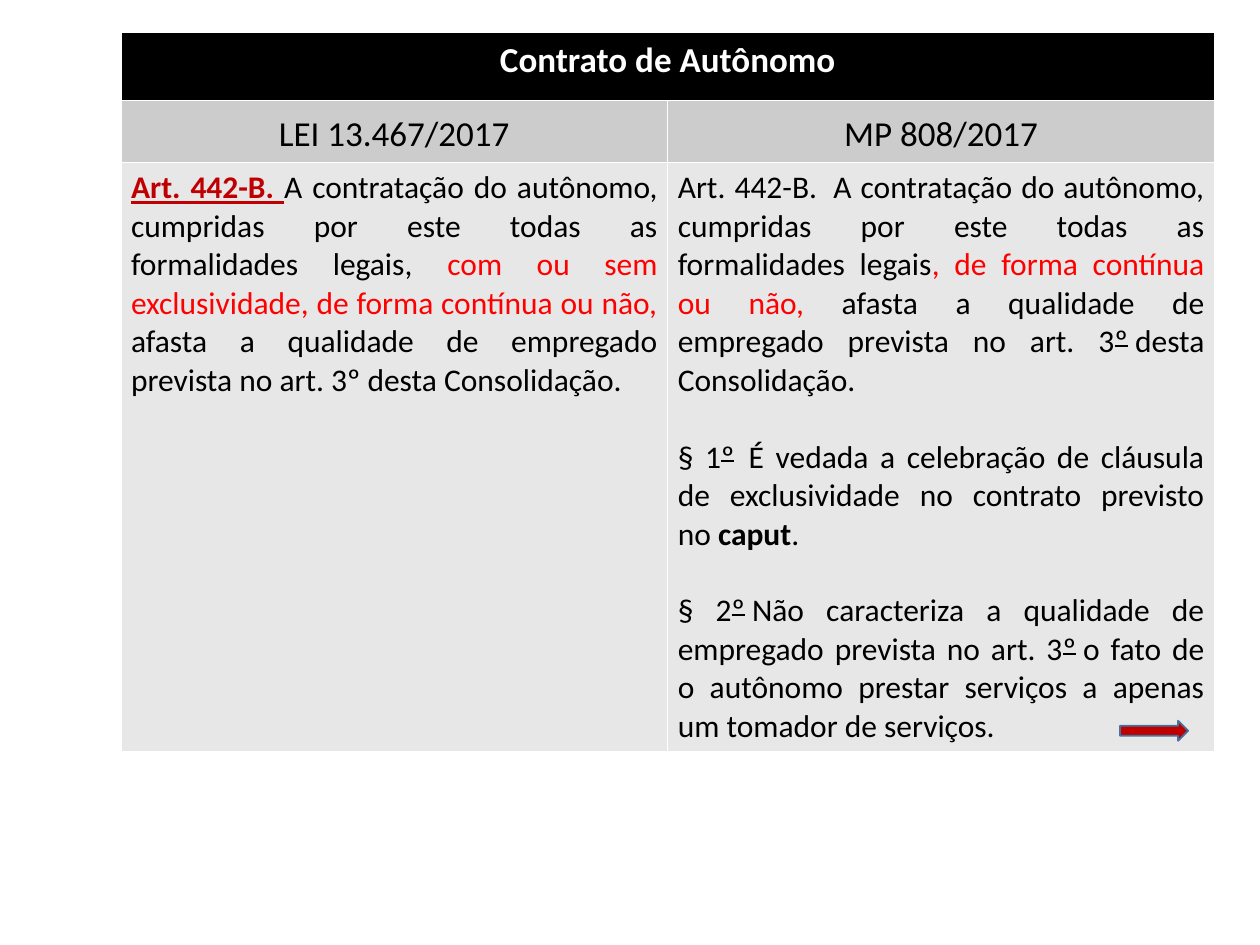
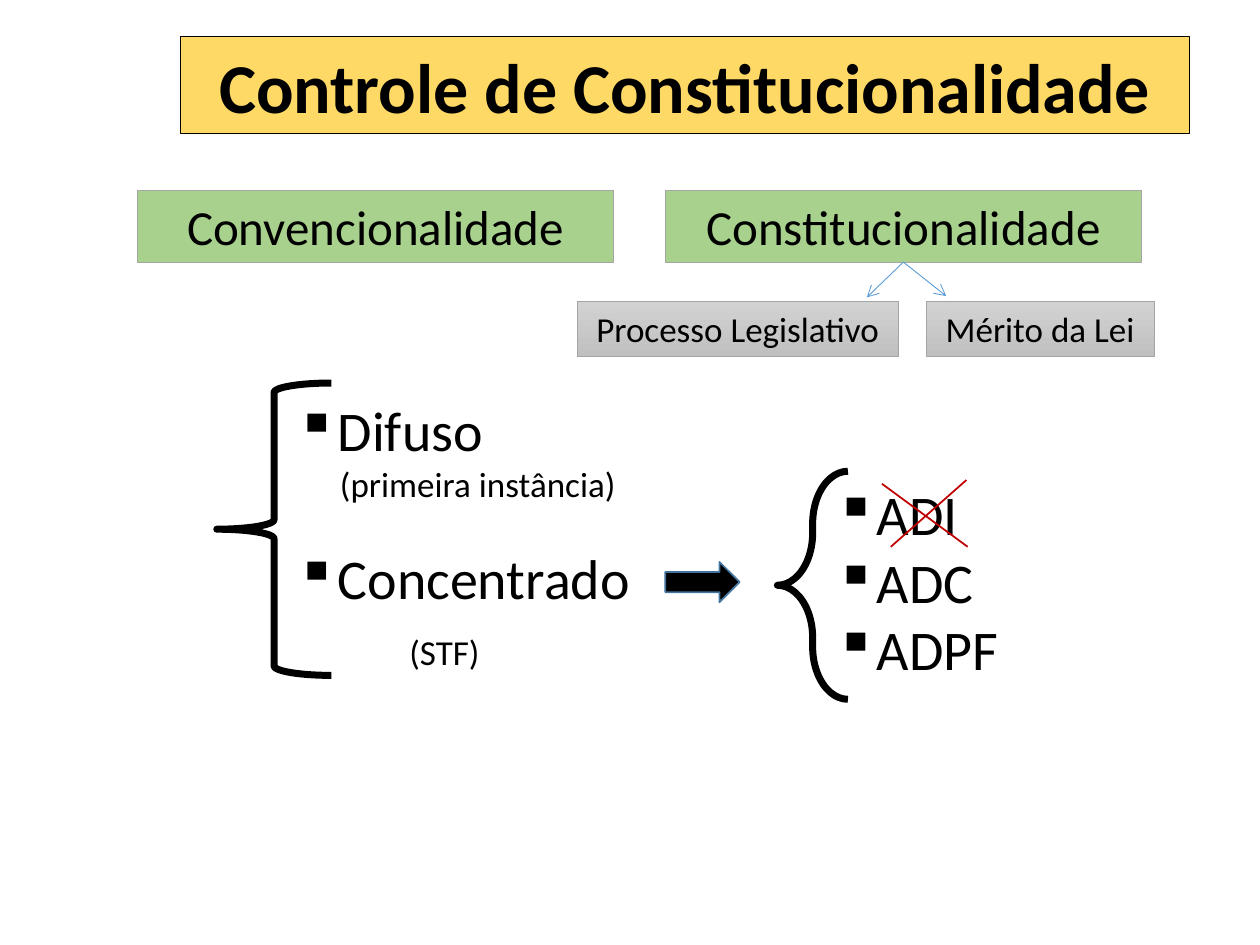
from lxml import etree
from pptx import Presentation
from pptx import util as u
from pptx.dml.color import RGBColor
from pptx.enum import shapes, text
from pptx.oxml.ns import qn

FONT = "Calibri"
WHITE, BLACK, RED, BRIGHT_RED = "FFFFFF", "000000", "C00000", "FF0000"
HEADER_GREY, BODY_GREY = "CCCCCC", "E7E7E7"
GOLD, GREEN, BOX_EDGE = "FFD966", "A9D18E", "A5A5A5"
BLUE, ARROW_EDGE = "5B9BD5", "43739E"
SILVER = ("D2D2D2", "C0C0C0")
CENTER, JUSTIFY = text.PP_ALIGN.CENTER, text.PP_ALIGN.JUSTIFY
SHAPE = shapes.MSO_SHAPE

CONTRACT_TITLE = "Contrato de Autônomo"
LAWS = ["LEI 13.467/2017", "MP 808/2017"]
ORDINAL = ("º", "strike")
ARTICLES = [
    [[("Art. 442-B. ", "article"),
      ("A contratação do autônomo, cumpridas por este todas as formalidades legais, ", ""),
      ("com ou sem exclusividade, de forma contínua ou não, ", "changed"),
      ("afasta a qualidade de empregado prevista no art. 3º desta Consolidação.", "")]],
    [[("Art. 442-B.\N{NO-BREAK SPACE} A contratação do autônomo, cumpridas por este todas as formalidades legais", ""),
      (", de forma contínua ou não,", "changed"),
      (" afasta a qualidade de empregado prevista no art. 3", ""),
      ORDINAL, ("\N{NO-BREAK SPACE}desta Consolidação.", "")],
     [("§ 1", ""), ORDINAL,
      ("\N{NO-BREAK SPACE}\N{NO-BREAK SPACE}É vedada a celebração de cláusula de exclusividade "
       "no contrato previsto no\N{NO-BREAK SPACE}", ""),
      ("caput", "bold"), (".", "")],
     [("§ 2", ""), ORDINAL,
      ("\N{NO-BREAK SPACE}Não caracteriza a qualidade de empregado prevista no art. 3", ""),
      ORDINAL,
      ("\N{NO-BREAK SPACE}o fato de o autônomo prestar serviços a apenas um tomador de serviços.", "")]],
]
TABLE_AT = (0.96, 0.26, 8.68, 5.54)
ROW_HEIGHTS = [0.54, 0.4, 4.6]

BOXES = [
    ("Controle de Constitucionalidade", (1.43, 0.29, 8.01, 0.77), GOLD, BLACK, 40, True),
    ("Convencionalidade", (1.09, 1.51, 3.78, 0.57), GREEN, BOX_EDGE, 28, False),
    ("Constitucionalidade", (5.28, 1.51, 3.78, 0.57), GREEN, BOX_EDGE, 28, False),
    ("Processo Legislativo", (4.58, 2.39, 2.55, 0.44), SILVER, BOX_EDGE, 20, False),
    ("Mérito da Lei", (7.35, 2.39, 1.81, 0.44), SILVER, BOX_EDGE, 20, False),
]
BULLET_INDENT = 0.23
CONTROL_TYPES = [
    ("Difuso", 32, BULLET_INDENT, True, 0),
    ("(primeira instância)", 20, 0.35, False, 0),
    ("Concentrado", 32, BULLET_INDENT, True, 22),
    ("(STF)", 20, 0.9, False, 11.5),
]
ACTIONS = [(action, 32, BULLET_INDENT, True, 0) for action in ("ADI", "ADC", "ADPF")]
BRACES = [((1.72, 3.04, 0.91, 2.32), 0.083), ((6.17, 3.74, 0.56, 1.81), 0.742)]
BRANCHES = [((7.17, 2.08), (6.88, 2.36)), ((7.17, 2.08), (7.51, 2.35))]
CROSS = [((7, 3.84), (7.68, 4.34)), ((7.07, 4.34), (7.67, 3.81))]


def rgb(value):
    return RGBColor.from_string(value)


def inches(values):
    return [u.Inches(value) for value in values]


def style(run, size, color=BLACK, bold=False):
    run.font.name = FONT
    run.font.size = u.Pt(size)
    run.font.bold = bold
    run.font.color.rgb = rgb(color)


def paint(shape, fill, edge, width):
    shape.shadow.inherit = False
    if fill is None:
        shape.fill.background()
    elif isinstance(fill, tuple):
        shape.fill.gradient()
        shape.fill.gradient_angle = 270
        for stop, color, position in zip(shape.fill.gradient_stops, fill, (0, 1)):
            stop.color.rgb = rgb(color)
            stop.position = position
    else:
        shape.fill.solid()
        shape.fill.fore_color.rgb = rgb(fill)
    shape.line.color.rgb = rgb(edge)
    shape.line.width = u.Pt(width)


def add_preset(slide, kind, at, fill, edge, width):
    shape = slide.shapes.add_shape(kind, *inches(at))
    paint(shape, fill, edge, width)
    return shape


def add_line(slide, start, end, color, width, arrow=False):
    line = slide.shapes.add_connector(shapes.MSO_CONNECTOR.STRAIGHT, *inches(start + end))
    line.line.color.rgb = rgb(color)
    line.line.width = u.Pt(width)
    if arrow:
        etree.SubElement(line.line._get_or_add_ln(), qn("a:tailEnd"), type="arrow")
    etree.SubElement(line._element.spPr, qn("a:effectLst"))


def add_list(slide, at, items):
    frame = slide.shapes.add_textbox(*inches(at)).text_frame
    frame.word_wrap = True
    for index, (label, size, indent, bulleted, before) in enumerate(items):
        paragraph = frame.paragraphs[0] if index == 0 else frame.add_paragraph()
        paragraph.text = label
        if before:
            paragraph.space_before = u.Pt(before)
        props = paragraph._p.get_or_add_pPr()
        props.set("marL", str(u.Inches(indent)))
        props.set("indent", str(-u.Inches(indent) if bulleted else 0))
        if bulleted:
            etree.SubElement(props, qn("a:buChar"), char="▪")
        style(paragraph.runs[0], size)


def fill_cell(cell, color):
    cell.fill.solid()
    cell.fill.fore_color.rgb = rgb(color)
    cell.margin_left = cell.margin_right = u.Inches(0.08)
    cell.margin_top = cell.margin_bottom = u.Inches(0.05)


def write_heading(cell, label, fill, color, bold, spacing):
    fill_cell(cell, fill)
    paragraph = cell.text_frame.paragraphs[0]
    paragraph.text = label
    paragraph.alignment = CENTER
    paragraph.line_spacing = spacing
    style(paragraph.runs[0], 20, color, bold)


def write_article(cell, clauses):
    fill_cell(cell, BODY_GREY)
    for index, clause in enumerate(clauses):
        paragraph = cell.text_frame.paragraphs[0] if index == 0 else cell.text_frame.add_paragraph()
        paragraph.alignment = JUSTIFY
        if index:
            paragraph.space_before = u.Pt(22)
        for words, role in clause:
            run = paragraph.add_run()
            run.text = words
            color = {"article": RED, "changed": BRIGHT_RED}.get(role, BLACK)
            style(run, 18, color, role in ("article", "bold"))
            if role == "article":
                run.font.underline = True
            if role == "strike":
                run._r.get_or_add_rPr().set("strike", "sngStrike")


def build_contract(slide):
    table = slide.shapes.add_table(len(ROW_HEIGHTS), len(LAWS), *inches(TABLE_AT)).table
    table.horz_banding = False
    for row, height in zip(table.rows, ROW_HEIGHTS):
        row.height = u.Inches(height)
    table.cell(0, 0).merge(table.cell(0, 1))
    write_heading(table.cell(0, 0), CONTRACT_TITLE, BLACK, WHITE, True, 1.0)
    for column, (law, clauses) in enumerate(zip(LAWS, ARTICLES)):
        write_heading(table.cell(1, column), law, HEADER_GREY, BLACK, False, 1.15)
        write_article(table.cell(2, column), clauses)
    add_preset(slide, SHAPE.RIGHT_ARROW, (8.89, 5.72, 0.54, 0.16), RED, ARROW_EDGE, 1)


def build_control(slide):
    for label, at, fill, edge, size, bold in BOXES:
        box = add_preset(slide, SHAPE.RECTANGLE, at, fill, edge, 0.5)
        box.text_frame.word_wrap = True
        box.text_frame.text = label
        paragraph = box.text_frame.paragraphs[0]
        paragraph.alignment = CENTER
        style(paragraph.runs[0], size, BLACK, bold)
    for at, curl in BRACES:
        brace = add_preset(slide, SHAPE.LEFT_BRACE, at, None, BLACK, 4)
        brace.adjustments[0] = curl
    add_list(slide, (2.25, 3.09, 3.1, 2.36), CONTROL_TYPES)
    add_list(slide, (6.53, 3.76, 1.76, 1.72), ACTIONS)
    add_preset(slide, SHAPE.RIGHT_ARROW, (5.28, 4.46, 0.59, 0.32), BLACK, ARROW_EDGE, 1)
    for start, end in BRANCHES:
        add_line(slide, start, end, BLUE, 0.5, arrow=True)
    for start, end in CROSS:
        add_line(slide, start, end, RED, 1)


def main():
    deck = Presentation()
    deck.slide_width, deck.slide_height = inches((10, 7.5))
    for build in (build_contract, build_control):
        build(deck.slides.add_slide(deck.slide_layouts[6]))
    deck.save("out.pptx")


if __name__ == "__main__":
    main()
